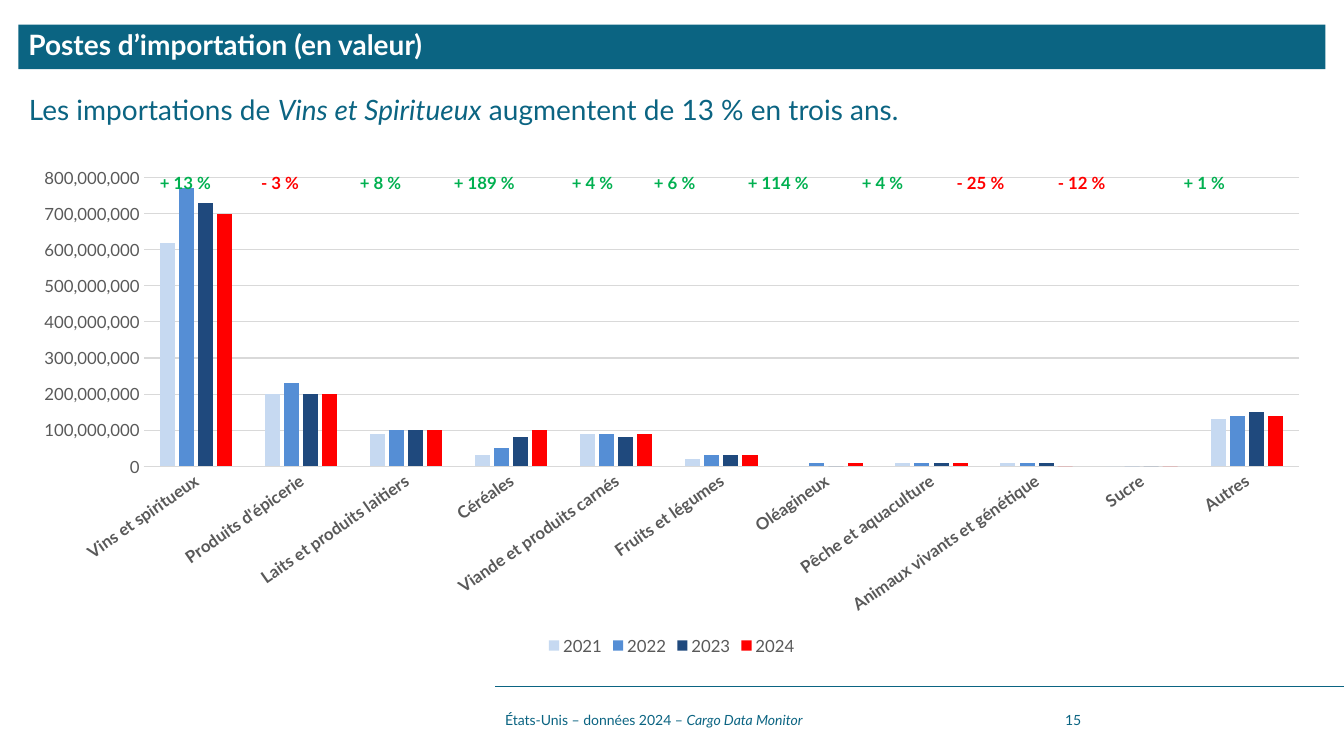
from lxml.etree import SubElement
from pptx import Presentation
from pptx.chart.data import CategoryChartData
from pptx.dml.color import RGBColor
from pptx.enum.chart import XL_CHART_TYPE, XL_LEGEND_POSITION, XL_TICK_MARK
from pptx.enum.shapes import MSO_CONNECTOR
from pptx.enum.text import MSO_ANCHOR, PP_ALIGN
from pptx.oxml.ns import qn
from pptx.util import Cm, Pt

TEAL = RGBColor(0x0B, 0x64, 0x82)
WHITE = RGBColor(0xFF, 0xFF, 0xFF)
GREEN = RGBColor(0x00, 0xB0, 0x50)
RED = RGBColor(0xFF, 0x00, 0x00)
GREY = RGBColor(0x59, 0x59, 0x59)
GRID = RGBColor(0xD9, 0xD9, 0xD9)

CATEGORIES = ["Vins et spiritueux", "Produits d'épicerie", "Laits et produits laitiers",
              "Céréales", "Viande et produits carnés", "Fruits et légumes", "Oléagineux",
              "Pêche et aquaculture", "Animaux vivants et génétique", "Sucre", "Autres"]
MILLION = 1_000_000
# Year: (colour, imports in millions)
IMPORTS = {
    "2021": (RGBColor(0xC6, 0xD9, 0xF1), [620, 200, 90, 30, 90, 20, 0, 10, 10, 0, 130]),
    "2022": (RGBColor(0x55, 0x8E, 0xD5), [770, 230, 100, 50, 90, 30, 10, 10, 10, 0, 140]),
    "2023": (RGBColor(0x1F, 0x49, 0x7D), [730, 200, 100, 80, 80, 30, 0, 10, 10, 0, 150]),
    "2024": (RED, [700, 200, 100, 100, 90, 30, 10, 10, 0, 0, 140]),
}
CHANGES = ["+ 13 %", "- 3 %", "+ 8 %", "+ 189 %", "+ 4 %", "+ 6 %",
           "+ 114 %", "+ 4 %", "- 25 %", "- 12 %", "+ 1 %"]
CHANGE_TABS = [2.55, 5.04, 7.41, 10.38, 12.45, 14.82, 17.69, 20.08, 22.63, 25.8]
LABEL_ANGLE = -35


class SlideBuilder:
    def __init__(self, slide, font_name="Lato"):
        self.slide = slide
        self.font_name = font_name

    def style(self, font, size, color, bold=False, italic=False):
        font.name = self.font_name
        font.size = Pt(size)
        font.color.rgb = color
        font.bold = bold
        font.italic = italic

    def add_span(self, para, text, size=10, color=TEAL, bold=False, italic=False):
        span = para.add_run()
        span.text = text
        self.style(span.font, size, color, bold, italic)

    def title(self, text, left, top, width, height):
        box = self.slide.shapes.title
        box.left, box.top, box.width, box.height = Cm(left), Cm(top), Cm(width), Cm(height)
        box.fill.solid()
        box.fill.fore_color.rgb = TEAL
        box.text_frame.vertical_anchor = MSO_ANCHOR.MIDDLE
        para = box.text_frame.paragraphs[0]
        para.alignment = PP_ALIGN.LEFT
        para.line_spacing = 0.9
        self.add_span(para, text, size=20, color=WHITE, bold=True)

    def text_line(self, left, top, width, height, anchor=MSO_ANCHOR.TOP, spacing=1.0):
        """Add an empty one-paragraph text box and return its paragraph."""
        frame = self.slide.shapes.add_textbox(Cm(left), Cm(top), Cm(width), Cm(height)).text_frame
        frame.word_wrap = True
        frame.vertical_anchor = anchor
        para = frame.paragraphs[0]
        para.line_spacing = spacing
        return para

    def tabbed_changes(self, changes, tabs, left, top, width, height):
        para = self.text_line(left, top, width, height, spacing=0.9)
        tab_list = SubElement(para._p.get_or_add_pPr(), qn("a:tabLst"))
        for position in tabs:
            SubElement(tab_list, qn("a:tab"), pos=str(Cm(position)), algn="l")
        for index, change in enumerate(changes):
            color = RED if change.startswith("-") else GREEN
            self.add_span(para, "\t" + change if index else change, size=12, color=color, bold=True)

    def rule(self, left, right, top):
        line = self.slide.shapes.add_connector(
            MSO_CONNECTOR.STRAIGHT, Cm(right), Cm(top), Cm(left), Cm(top))
        line.line.color.rgb = TEAL
        line.line.width = Pt(0.5)
        SubElement(line._element.spPr, qn("a:effectLst"))

    def column_chart(self, left, top, width, height):
        data = CategoryChartData(number_format="#,##0")
        data.categories = CATEGORIES
        for year, (_, millions) in IMPORTS.items():
            data.add_series(year, [value * MILLION for value in millions])
        chart = self.slide.shapes.add_chart(
            XL_CHART_TYPE.COLUMN_CLUSTERED, Cm(left), Cm(top), Cm(width), Cm(height), data).chart
        chart.has_title = False
        self.style(chart.font, 12, GREY)

        plot = chart.plots[0]
        plot.vary_by_categories = False
        plot.gap_width = 219
        plot.overlap = -27
        for series, (color, _) in zip(plot.series, IMPORTS.values()):
            series.format.fill.solid()
            series.format.fill.fore_color.rgb = color

        for axis in (chart.category_axis, chart.value_axis):
            axis.major_tick_mark = axis.minor_tick_mark = XL_TICK_MARK.NONE
        names = chart.category_axis
        self.style(names.tick_labels.font, 12, GREY, bold=True)
        names._element.txPr.bodyPr.set("rot", str(LABEL_ANGLE * 60000))
        names._element.txPr.bodyPr.set("vert", "horz")
        self.thin_line(names.format.line)

        values = chart.value_axis
        values.minimum_scale, values.maximum_scale = 0, 800 * MILLION
        values.major_unit = 100 * MILLION
        values.tick_labels.number_format = "#,##0"
        values.tick_labels.number_format_is_linked = False
        self.style(values.tick_labels.font, 12, GREY)
        values.format.line.fill.background()
        self.thin_line(values.major_gridlines.format.line)

        chart.has_legend = True
        chart.legend.position = XL_LEGEND_POSITION.BOTTOM
        chart.legend.include_in_layout = False
        self.style(chart.legend.font, 12, GREY)

    def thin_line(self, line):
        line.color.rgb = GRID
        line.width = Pt(0.75)


def main():
    deck = Presentation()
    deck.slide_width, deck.slide_height = Cm(33.87), Cm(19.05)
    page = SlideBuilder(deck.slides.add_slide(deck.slide_layouts[5]))

    page.title("Postes d’importation (en valeur)", 0.46, 0.62, 32.94, 1.12)
    heading = page.text_line(0.48, 2.37, 32.92, 0.99, spacing=0.8)
    page.add_span(heading, "Les importations de ", size=20)
    page.add_span(heading, "Vins et Spiritueux", size=20, italic=True)
    page.add_span(heading, " augmentent de 13 % en trois ans.", size=20)

    page.column_chart(0.46, 3.97, 32.94, 12.65)
    page.tabbed_changes(CHANGES, CHANGE_TABS, 3.78, 4.29, 29.7, 0.71)

    page.rule(12.47, 33.87, 17.3)
    footer = page.text_line(12.48, 17.63, 13.79, 1.02, anchor=MSO_ANCHOR.MIDDLE)
    page.add_span(footer, "États-Unis – données 2024 – ")
    page.add_span(footer, "Cargo Data Monitor", italic=True)
    number = page.text_line(26.59, 17.63, 2.51, 1.02, anchor=MSO_ANCHOR.MIDDLE)
    page.add_span(number, "15")

    deck.save("out.pptx")


if __name__ == "__main__":
    main()
